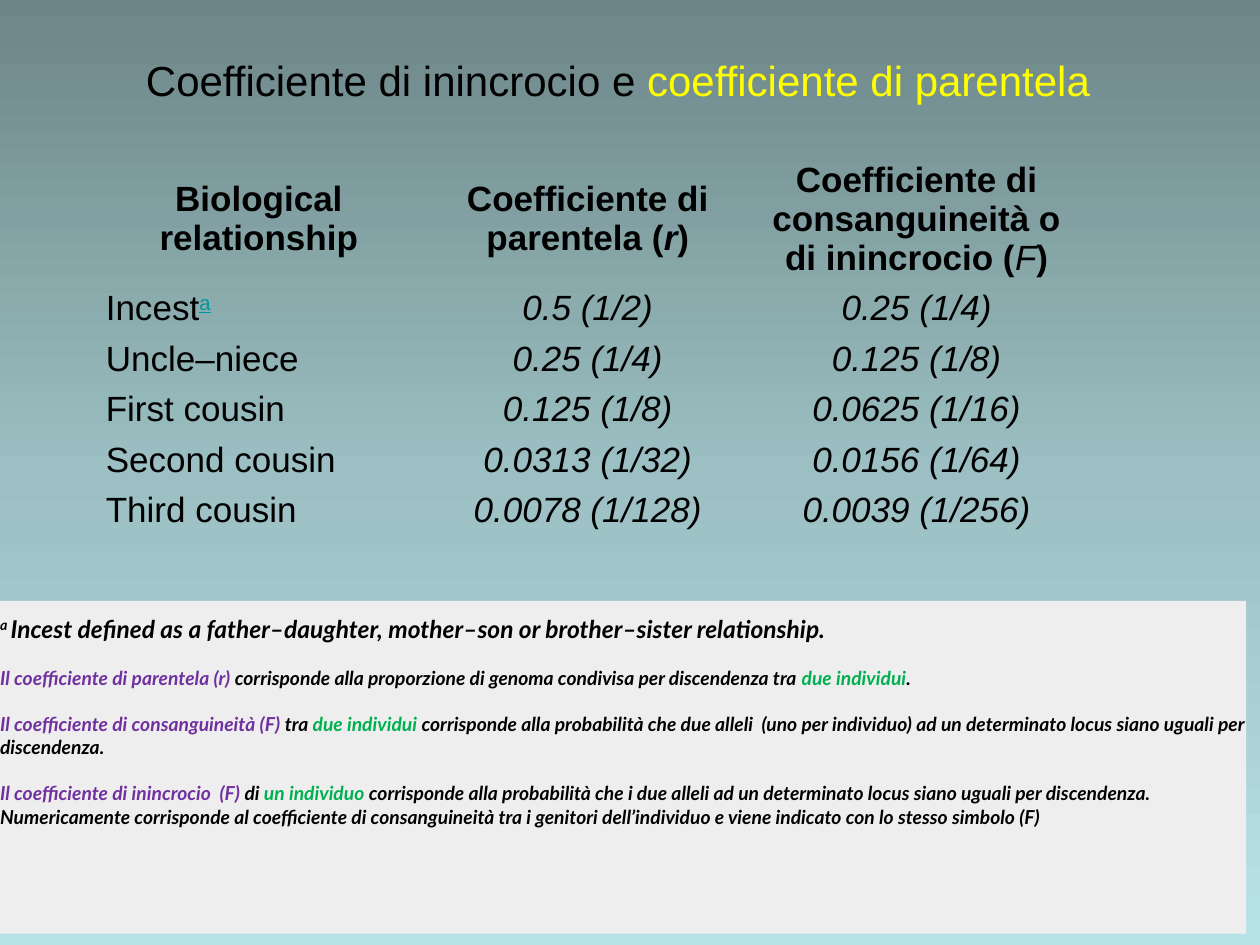
from copy import deepcopy

from pptx import Presentation
from pptx.dml.color import RGBColor
from pptx.enum.shapes import MSO_SHAPE
from pptx.enum.text import MSO_ANCHOR, PP_ALIGN
from pptx.oxml.ns import qn
from pptx.util import Inches, Pt

CENTER, LEFT = PP_ALIGN.CENTER, PP_ALIGN.LEFT
MIDDLE, TOP = MSO_ANCHOR.MIDDLE, MSO_ANCHOR.TOP
BLACK = RGBColor(0x00, 0x00, 0x00)
YELLOW = RGBColor(0xFF, 0xFF, 0x00)
TEAL = RGBColor(0x00, 0x99, 0x99)
PURPLE = RGBColor(0x70, 0x30, 0xA0)
GREEN = RGBColor(0x00, 0xB0, 0x50)
PANEL = RGBColor(0xEE, 0xEE, 0xEE)
BACKDROP = [(0, RGBColor(0x6D, 0x86, 0x88)),
            (0.5, RGBColor(0x9B, 0xBF, 0xC2)),
            (1, RGBColor(0xB8, 0xE3, 0xE6))]
NO_STYLE = "{2D5ABB26-0587-4C30-8999-92F81FD0307C}"

# Content: each paragraph is a list of (text, options) runs
TITLE = [("Coefficiente di inincrocio e ", {}),
         ("coefficiente di parentela", {"color": YELLOW})]
HEADER = [
    [("Biological relationship", {})],
    [("Coefficiente di parentela (", {}), ("r", {"italic": True}), (")", {})],
    [("Coefficiente di consanguineità o di inincrocio (", {}),
     ("F", {"bold": False, "italic": True}), (")", {})],
]
RELATIONS = [
    ("Incest", "0.5 (1/2)", "0.25 (1/4)"),
    ("Uncle–niece", "0.25 (1/4)", "0.125 (1/8)"),
    ("First cousin", "0.125 (1/8)", "0.0625 (1/16)"),
    ("Second cousin", "0.0313 (1/32)", "0.0156 (1/64)"),
    ("Third cousin", "0.0078 (1/128)", "0.0039 (1/256)"),
]
NOTE_MARK = ("a", {"color": TEAL, "underline": True, "raised": True})
FOOTNOTE = [
    ("a ", {"raised": True}),
    ("Incest defined as a father–daughter, mother–son or brother–sister "
     "relationship.", {}),
]
DEFINITIONS = [
    [("Il coefficiente di parentela (r) ", {"color": PURPLE}),
     ("corrisponde alla proporzione di genoma condivisa per discendenza tra ",
      {}),
     ("due individui", {"color": GREEN}), (".", {})],
    [("Il coefficiente di consanguineità (F) ", {"color": PURPLE}),
     ("tra ", {}), ("due individui ", {"color": GREEN}),
     ("corrisponde alla probabilità che due alleli  (uno per individuo) ad un "
      "determinato locus siano uguali per discendenza.", {})],
    [("Il coefficiente di inincrocio  (F) ", {"color": PURPLE}),
     ("di ", {}), ("un individuo ", {"color": GREEN}),
     ("corrisponde alla probabilità che i due alleli ad un determinato locus "
      "siano uguali per discendenza. Numericamente corrisponde al coefficiente "
      "di consanguineità tra i genitori dell’individuo e viene indicato con lo "
      "stesso simbolo (F)", {})],
]


def write(p, runs, font, size, align=LEFT, bold=False, italic=False):
    p.alignment = align
    p.font.name, p.font.size = font, Pt(size)
    p.font.bold, p.font.italic = bold, italic
    for text, opts in runs:
        r = p.add_run()
        r.text = text
        f = r.font
        f.name, f.size = font, Pt(size)
        f.bold = opts.get("bold", bold)
        f.italic = opts.get("italic", italic)
        f.color.rgb = opts.get("color", BLACK)
        if opts.get("underline"):
            f.underline = True
        if opts.get("raised"):
            r._r.get_or_add_rPr().set("baseline", "30000")


prs = Presentation()
prs.slide_width, prs.slide_height = Inches(10), Inches(7.5)
s = prs.slides.add_slide(prs.slide_layouts[6])

# Background gradient, top to bottom
fill = s.background.fill
fill.gradient()
fill.gradient_angle = 270
stop_list = s.element.find(".//" + qn("a:gsLst"))
stop_list.append(deepcopy(stop_list[0]))
for stop, (position, color) in zip(fill.gradient_stops, BACKDROP):
    stop.position = position
    stop.color.rgb = color

# Table of coefficients
HEADER_H, ROW_H, COL_W = Inches(1.02), Inches(0.4), Inches(2.61)
rows = [HEADER] + [[[(text, {})] for text in row] for row in RELATIONS]
rows[1][0].append(NOTE_MARK)
table = s.shapes.add_table(len(rows), len(HEADER), Inches(0.75), Inches(1.23),
                           COL_W * len(HEADER),
                           HEADER_H + ROW_H * len(RELATIONS)).table
table.first_row = table.horz_banding = False
table._tbl.tblPr.find(qn("a:tableStyleId")).text = NO_STYLE
for column in table.columns:
    column.width = COL_W
for i, row in enumerate(rows):
    table.rows[i].height = ROW_H if i else HEADER_H
    for j, runs in enumerate(row):
        cell = table.cell(i, j)
        cell.fill.background()
        cell.vertical_anchor = MIDDLE
        cell.margin_left = cell.margin_right = Inches(0.09)
        cell.margin_top = cell.margin_bottom = Inches(0.04)
        write(cell.text_frame.paragraphs[0], runs, "Arial", 20,
              align=LEFT if i and j == 0 else CENTER,
              bold=i == 0, italic=i > 0 and j > 0)

# Panel with footnote and definitions
sp = s.shapes.add_shape(MSO_SHAPE.RECTANGLE, 0, Inches(4.77),
                        Inches(9.89), Inches(2.64))
sp.shadow.inherit = False
sp.fill.solid()
sp.fill.fore_color.rgb = PANEL
sp.line.fill.background()
tf = sp.text_frame
tf.word_wrap = True
tf.vertical_anchor = TOP
tf.margin_left = tf.margin_right = tf.margin_bottom = 0
tf.margin_top = Inches(0.1)
write(tf.paragraphs[0], FOOTNOTE, "Lato", 14, bold=True, italic=True)
for runs in DEFINITIONS:
    p = tf.add_paragraph()
    p.space_before = Pt(13.2)
    write(p, runs, "Lato", 11, bold=True, italic=True)

# Title
tf = s.shapes.add_textbox(Inches(1.06), Inches(0.38),
                          Inches(7.78), Inches(0.5)).text_frame
tf.word_wrap = False
write(tf.paragraphs[0], TITLE, "Arial", 24)

prs.save("out.pptx")
